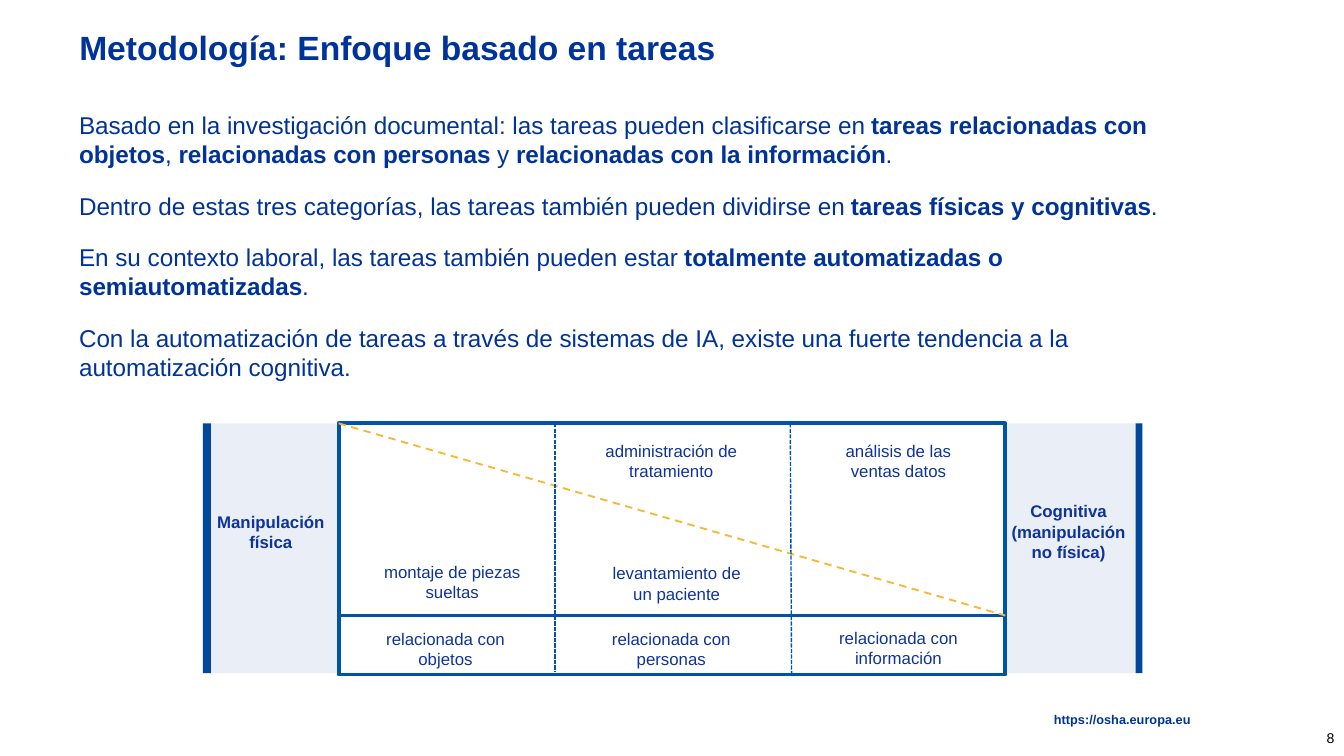
from dataclasses import dataclass

from lxml.etree import SubElement
from pptx import Presentation
from pptx.dml.color import RGBColor
from pptx.enum.dml import MSO_LINE
from pptx.enum.shapes import MSO_CONNECTOR, MSO_SHAPE
from pptx.enum.text import MSO_ANCHOR, MSO_AUTO_SIZE, PP_ALIGN
from pptx.oxml.ns import qn
from pptx.util import Inches, Pt


@dataclass(frozen=True)
class Theme:
    font: str = "Arial"
    navy: str = "003399"
    label: str = "0E3399"
    bar: str = "00499A"
    frame: str = "0054A8"
    panel: str = "EAEEF6"
    white: str = "FFFFFF"
    amber: str = "F8B734"
    black: str = "000000"
    title_size: float = 18
    body_size: float = 13
    label_size: float = 9
    number_size: float = 7.5
    link_size: float = 6.8


theme = Theme()


def write(holder, text, size=theme.label_size, color=theme.label, bold=False,
          align=PP_ALIGN.CENTER, anchor=MSO_ANCHOR.TOP, gap=0, spacing=None,
          margins=(0.1, 0.05), fit=MSO_AUTO_SIZE.SHAPE_TO_FIT_TEXT):
    frame = holder.text_frame
    frame.word_wrap = True
    frame.auto_size = fit
    frame.vertical_anchor = anchor
    frame.margin_left = frame.margin_right = Inches(margins[0])
    frame.margin_top = frame.margin_bottom = Inches(margins[1])
    for index, content in enumerate(text.split("\n")):
        paragraph = frame.add_paragraph() if index else frame.paragraphs[0]
        paragraph.alignment = align
        paragraph.space_before = Pt(gap if index else 0)
        paragraph.space_after = Pt(gap)
        paragraph.line_spacing = spacing
        for part, words in enumerate(content.split("**")):
            for row, line in enumerate(words.split("\v")):
                if row:
                    paragraph.add_line_break()
                if not line:
                    continue
                run = paragraph.add_run()
                run.text = line
                run.font.name = theme.font
                run.font.size = Pt(size)
                run.font.bold = bold or part % 2 == 1
                run.font.color.rgb = RGBColor.from_string(color)


prs = Presentation()
prs.slide_width = Inches(10)
prs.slide_height = Inches(10 * 9 / 16)
slide = prs.slides.add_slide(prs.slide_layouts[5])
shapes = slide.shapes

title = shapes.title
title.left, title.top, title.width, title.height = map(Inches, (0.49, 0.15, 8.27, 0.4))
write(title, "Metodología: Enfoque basado en tareas", size=theme.title_size,
      color=theme.navy, bold=True, align=PP_ALIGN.LEFT, anchor=MSO_ANCHOR.MIDDLE)

findings = "\n".join([
    "Basado en la investigación documental: las tareas pueden clasificarse en "
    "**tareas relacionadas con objetos**, **relacionadas con personas **y "
    "**relacionadas con la información**.",
    "Dentro de estas tres categorías, las tareas también pueden dividirse en "
    "**tareas físicas y cognitivas**.",
    "En su contexto laboral, las tareas también pueden estar "
    "**totalmente automatizadas o semiautomatizadas**.",
    "Con la automatización de tareas a través de sistemas de IA, existe una "
    "fuerte tendencia a la automatización cognitiva.",
])
body = shapes.add_textbox(*map(Inches, (0.49, 0.77, 8.27, 2.36)))
write(body, findings, size=theme.body_size, color=theme.navy, align=PP_ALIGN.LEFT, gap=6)

top, left, right, divider, depth = 3.15, 2.52, 7.48, 4.58, 1.86
blocks = [
    (1.51, top, 6.99, depth, theme.panel, None),
    (8.45, top, 0.05, depth, theme.bar, None),
    (1.51, top, 0.06, depth, theme.bar, None),
    (left, top, right - left, 1.45, theme.white, theme.frame),
    (left, divider, right - left, 0.44, theme.white, theme.frame),
]
for x, y, width, height, fill, outline in blocks:
    block = shapes.add_shape(MSO_SHAPE.RECTANGLE, *map(Inches, (x, y, width, height)))
    block.shadow.inherit = False
    block.fill.solid()
    block.fill.fore_color.rgb = RGBColor.from_string(fill)
    if outline:
        block.line.color.rgb = RGBColor.from_string(outline)
        block.line.width = Pt(2)
    else:
        block.line.fill.background()

dashes = [
    (left, top, right, divider, theme.amber, 1, MSO_LINE.DASH),
    (4.13, top, 4.13, 5, theme.frame, 0.75, MSO_LINE.SQUARE_DOT),
    (5.88, top, 5.89, 5.02, theme.frame, 0.75, MSO_LINE.SQUARE_DOT),
]
for x1, y1, x2, y2, color, weight, dash in dashes:
    divide = shapes.add_connector(MSO_CONNECTOR.STRAIGHT, *map(Inches, (x1, y1, x2, y2)))
    divide.line.color.rgb = RGBColor.from_string(color)
    divide.line.width = Pt(weight)
    divide.line.dash_style = dash
    SubElement(divide._element.spPr, qn("a:effectLst"))

labels = [
    ("Manipulación física", 1.51, 3.76, 1.01, 0.4, True),
    ("Cognitiva\v(manipulación no física)", 7.34, 3.68, 1.22, 0.56, True),
    ("montaje de piezas sueltas", 2.75, 4.13, 1.23, 0.4, False),
    ("análisis de las ventas datos", 6.07, 3.23, 1.23, 0.4, False),
    ("administración de tratamiento", 4.38, 3.23, 1.23, 0.25, False),
    ("levantamiento de un paciente", 4.42, 4.14, 1.23, 0.25, False),
    ("relacionada con objetos", 2.7, 4.63, 1.23, 0.25, False),
    ("relacionada con personas", 4.38, 4.63, 1.23, 0.25, False),
    ("relacionada con información", 6.05, 4.62, 1.27, 0.25, False),
]
for text, x, y, width, height, bold in labels:
    label = shapes.add_textbox(*map(Inches, (x, y, width, height)))
    write(label, text, bold=bold)

address = shapes.add_textbox(*map(Inches, (2.48, 5.31, 6.38, 0.09)))
write(address, "https://osha.europa.eu", size=theme.link_size, color=theme.navy,
      bold=True, align=PP_ALIGN.RIGHT, spacing=0.9, margins=(0, 0),
      fit=MSO_AUTO_SIZE.NONE)

number = shapes.add_textbox(*map(Inches, (9.33, 5.34, 0.67, 0.3)))
write(number, "8", size=theme.number_size, color=theme.black, align=PP_ALIGN.RIGHT,
      anchor=MSO_ANCHOR.MIDDLE, margins=(0.07, 0.04), fit=MSO_AUTO_SIZE.NONE)

prs.save("out.pptx")
